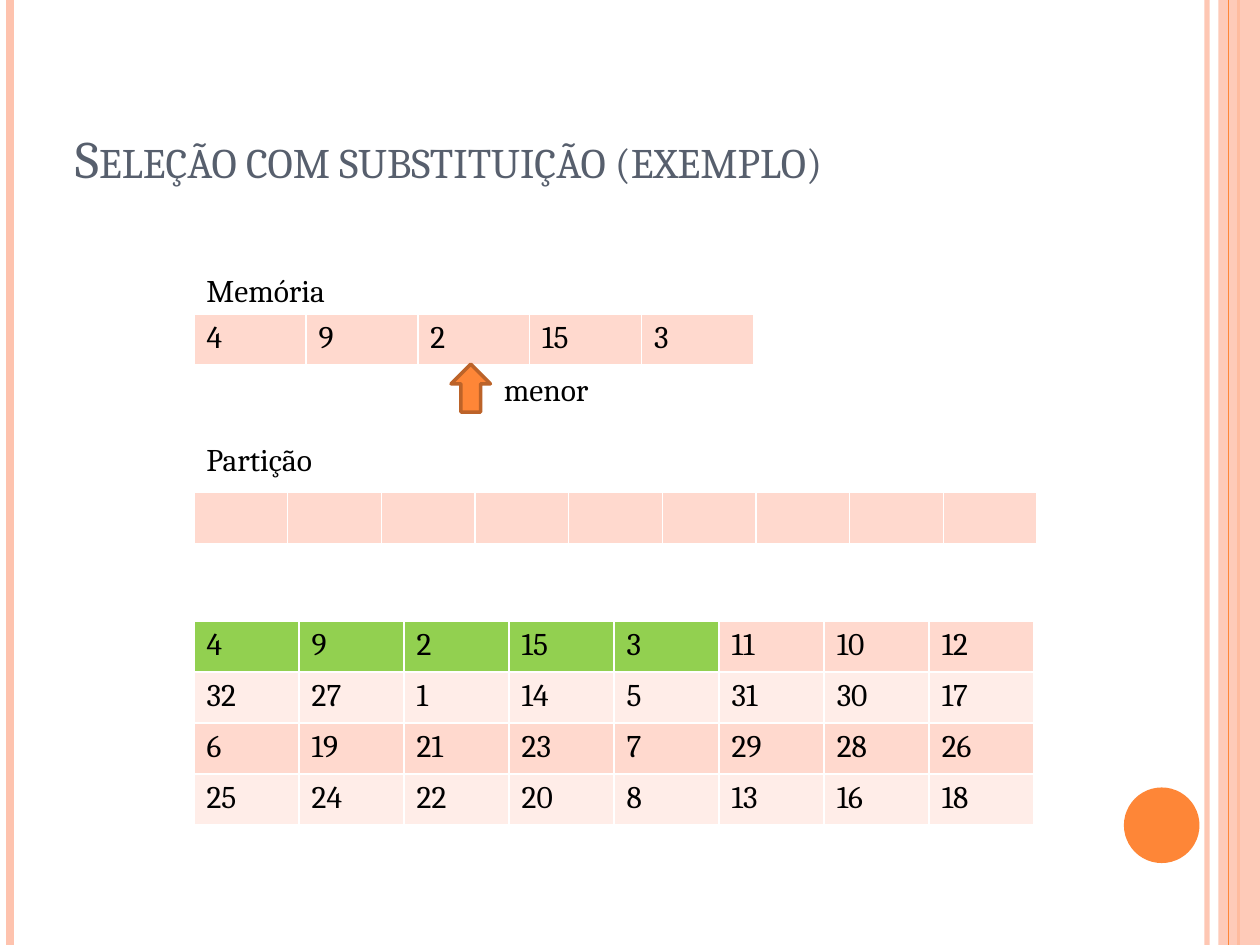
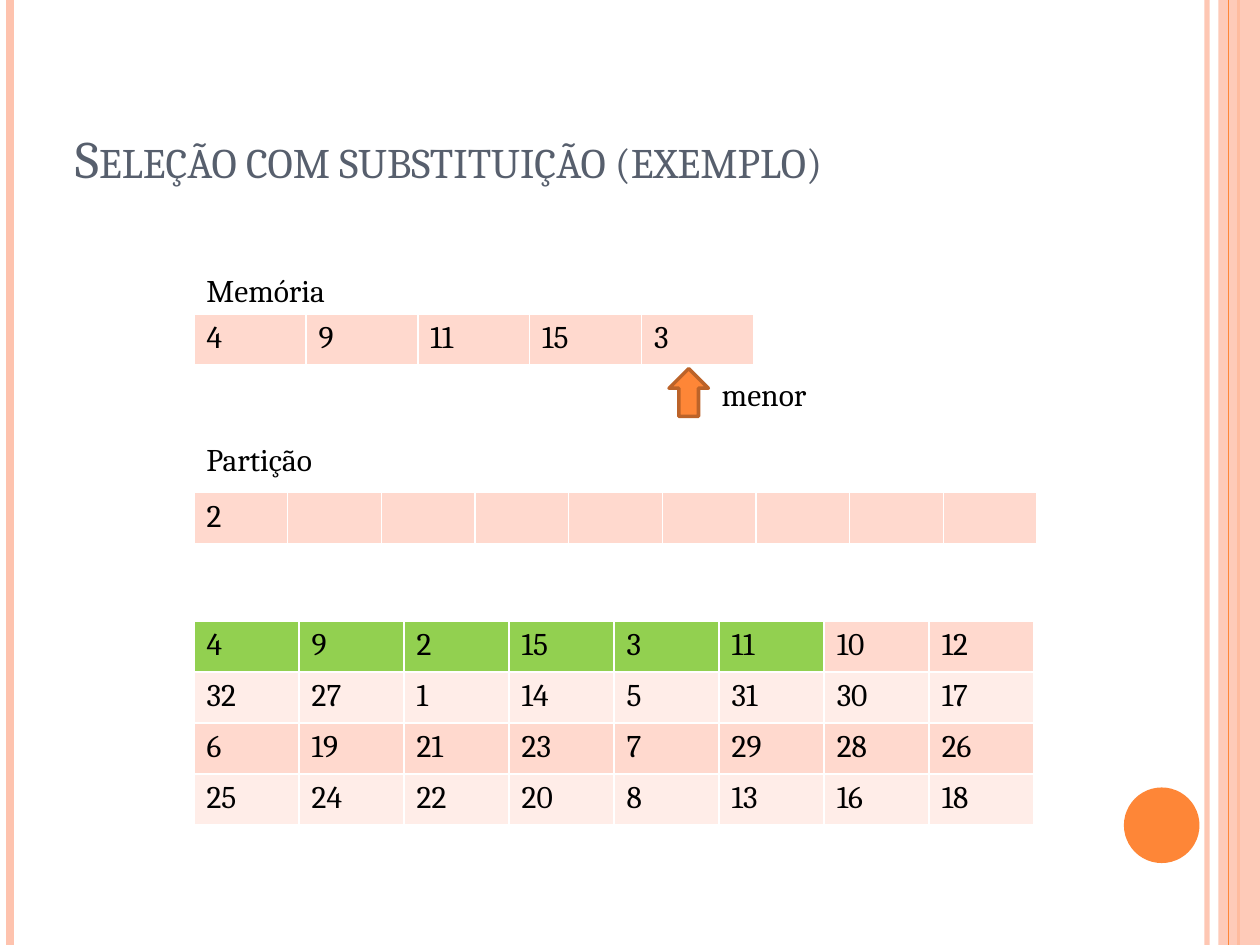
import collections

import pptx
import pptx.dml.color
import pptx.enum.shapes
import pptx.enum.text
import pptx.oxml.ns
import pptx.util
from lxml import etree

Box = collections.namedtuple("Box", "left top width height")
SHAPES = pptx.enum.shapes.MSO_SHAPE
ANCHORS = pptx.enum.text.MSO_ANCHOR

PAGE = Box(0, 0, 10, 7.5)
TITLE = Box(0.5, 0.3, 8.17, 1.25)
GRID_LEFT = 1.54
ROW_HEIGHT = 0.405
FONT = "Cambria"
ORANGE, ORANGE_EDGE, PEACH = "FE8637", "BC6329", "FEC3AE"
BAND_DARK, BAND_LIGHT, READ = "FFD9CE", "FFEDE8", "92D050"
SLATE, BLACK, WHITE = "575F6D", "000000", "FFFFFF"

INPUT_FILE = [
    [4, 9, 2, 15, 3, 11, 10, 12],
    [32, 27, 1, 14, 5, 31, 30, 17],
    [6, 19, 21, 23, 7, 29, 28, 26],
    [25, 24, 22, 20, 8, 13, 16, 18],
]
PARTITION_SLOTS = 9

Step = collections.namedtuple("Step", "memory partition read_count pointer")
STEPS = [
    Step([4, 9, 2, 15, 3], [], 5, Box(3.58, 2.89, 1.42, 0.38)),
    Step([4, 9, 11, 15, 3], [2], 6, Box(5.31, 2.925, 1.42, 0.38)),
]


def color(value):
    """Turn a hex string into a colour."""
    return pptx.dml.color.RGBColor.from_string(value)


def inches(box):
    """Convert the four lengths of a box to slide units."""
    return [pptx.util.Inches(length) for length in box]


def add_child(parent, tag, **attributes):
    """Append a DrawingML element to an XML parent."""
    return etree.SubElement(parent, pptx.oxml.ns.qn(tag), attributes)


def set_alpha(fill, percent):
    """Make a solid fill partly transparent."""
    if percent < 100:
        add_child(fill._xPr.find(".//" + pptx.oxml.ns.qn("a:srgbClr")),
                  "a:alpha", val=str(percent * 1000))


def add_span(para, text, size=18, hue=BLACK):
    """Add one styled run to a paragraph."""
    span = para.add_run()
    span.text = str(text)
    span.font.name = FONT
    span.font.size = pptx.util.Pt(size)
    span.font.color.rgb = color(hue)
    return span


def add_label(slide, box, text, wrap=False, anchor=ANCHORS.TOP, **style):
    """Add a text box holding one run and return that run."""
    frame = slide.shapes.add_textbox(*inches(box)).text_frame
    frame.word_wrap = wrap
    frame.vertical_anchor = anchor
    return add_span(frame.paragraphs[0], text, **style)


def add_shape(slide, kind, box, fill, edge=None, alpha=100):
    """Add a flat preset shape with an optional outline."""
    shape = slide.shapes.add_shape(kind, *inches(box))
    shape.shadow.inherit = False
    shape.fill.solid()
    shape.fill.fore_color.rgb = color(fill)
    set_alpha(shape.fill, alpha)
    if edge:
        shape.line.color.rgb = color(edge)
        shape.line.width = pptx.util.Pt(2)
    else:
        shape.line.fill.background()


def add_rail(slide, box, share, hue, weight, alpha=100):
    """Draw a vertical line over the full height at a share of the width."""
    x = box.left + share * box.width
    ends = inches((x, box.top, x, box.top + box.height))
    rail = slide.shapes.add_connector(pptx.enum.shapes.MSO_CONNECTOR.STRAIGHT, *ends)
    rail.line.color.rgb = color(hue)
    rail.line.width = pptx.util.Pt(weight)
    set_alpha(rail.line.fill, alpha)
    add_child(rail._element.spPr, "a:effectLst")


def add_frame(slide, box):
    """Draw the rails, the side band and the disc shared by all slides."""
    add_rail(slide, box, 0.958, PEACH, 3, alpha=93)
    add_rail(slide, box, 0.008, PEACH, 4.5)
    add_rail(slide, box, 0.983, ORANGE, 1.5)
    band = Box(box.left + 0.967 * box.width, box.top, 0.033 * box.width, box.height)
    add_shape(slide, SHAPES.RECTANGLE, band, PEACH, alpha=87)
    add_rail(slide, box, 0.975, ORANGE, 0.75)
    size = 0.06 * box.width
    disc = Box(box.left + 0.892 * box.width, box.top + box.height * 5 / 6, size, size)
    add_shape(slide, SHAPES.OVAL, disc, ORANGE)


def add_title(slide, box, text):
    """Write the slide title in small capitals at the foot of its box."""
    span = add_label(slide, box, text, wrap=True, anchor=ANCHORS.BOTTOM,
                     size=30, hue=SLATE)
    span.font._element.set("cap", "small")


def style_cell(cell, value, fill):
    """Give a cell its white borders, fill and value."""
    properties = cell._tc.get_or_add_tcPr()
    for side in ("a:lnL", "a:lnR", "a:lnT", "a:lnB"):
        border = add_child(properties, side, w=str(pptx.util.Pt(1)))
        add_child(add_child(border, "a:solidFill"), "a:srgbClr", val=WHITE)
    cell.fill.solid()
    cell.fill.fore_color.rgb = color(fill)
    if value is not None:
        add_span(cell.text_frame.paragraphs[0], value)


def add_records(slide, box, rows, read_count=0):
    """Add a banded table of equal cells, marking the records already read."""
    columns = len(rows[0])
    table = slide.shapes.add_table(len(rows), columns, *inches(box)).table
    table.first_row = table.horz_banding = False
    for column in table.columns:
        column.width = pptx.util.Inches(box.width / columns)
    for row_index, row in enumerate(rows):
        table.rows[row_index].height = pptx.util.Inches(box.height / len(rows))
        band = BAND_LIGHT if row_index % 2 else BAND_DARK
        for column_index, value in enumerate(row):
            is_read = row_index * columns + column_index < read_count
            style_cell(table.cell(row_index, column_index), value,
                       READ if is_read else band)


def add_pointer(slide, box, text):
    """Add an upward arrow with its caption on the right."""
    arrow = box._replace(width=0.22 * box.width)
    add_shape(slide, SHAPES.UP_ARROW, arrow, ORANGE, edge=ORANGE_EDGE)
    caption = box._replace(left=box.left + 0.225 * box.width, width=0.775 * box.width)
    add_label(slide, caption, text, wrap=True)


def build_step(deck, step):
    """Build the slide for one step of the selection."""
    slide = deck.slides.add_slide(deck.slide_layouts[6])
    add_frame(slide, PAGE)
    add_title(slide, TITLE, "Seleção com substituição (exemplo)")
    add_records(slide, Box(GRID_LEFT, 4.93, 6.67, ROW_HEIGHT * len(INPUT_FILE)),
                INPUT_FILE, step.read_count)
    add_records(slide, Box(GRID_LEFT, 2.49, 4.44, ROW_HEIGHT), [step.memory])
    free_slots = [None] * (PARTITION_SLOTS - len(step.partition))
    add_records(slide, Box(GRID_LEFT, 3.91, 6.69, ROW_HEIGHT),
                [step.partition + free_slots])
    add_label(slide, Box(GRID_LEFT, 2.1, 1.25, 0.4), "Memória")
    add_label(slide, Box(GRID_LEFT, 3.44, 1.18, 0.4), "Partição")
    add_pointer(slide, step.pointer, "menor")


def main():
    """Build and save the deck."""
    deck = pptx.Presentation()
    deck.slide_width, deck.slide_height = inches((PAGE.width, PAGE.height))
    for step in STEPS:
        build_step(deck, step)
    deck.save("out.pptx")


if __name__ == "__main__":
    main()
